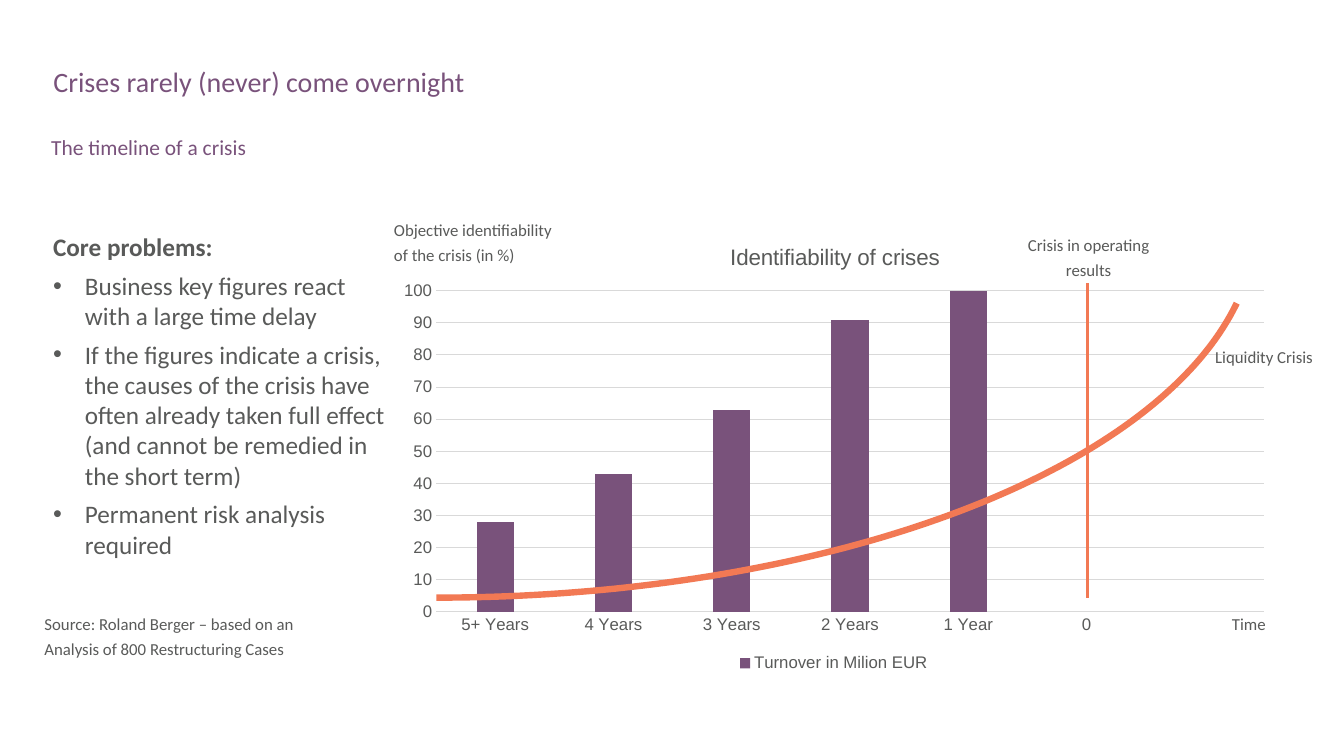
import math
from lxml import etree
from pptx import Presentation
from pptx import util as u
from pptx.chart import data
from pptx.dml import color
from pptx.enum import chart as ch, shapes, text
from pptx.oxml import parse_xml
from pptx.oxml import ns

Cm = u.Cm
THEME = {
    "font": "Calibri", "chart_font": "Arial",
    "purple": color.RGBColor.from_string("79527B"),
    "orange": color.RGBColor.from_string("F27954"),
    "grey": color.RGBColor.from_string("595A59"),
    "grid": color.RGBColor.from_string("D9D9D9"),
    "title": u.Pt(20), "subtitle": u.Pt(15.3), "body": u.Pt(18),
    "chart_title": u.Pt(16), "label": u.Pt(12),
}


def write(sp, box, lines, size, ink, para=None, frame=None):
    sp.left, sp.top, sp.width, sp.height = map(Cm, box)
    tf = sp.text_frame
    settings = {"word_wrap": True, "auto_size": text.MSO_AUTO_SIZE.NONE,
                "vertical_anchor": text.MSO_ANCHOR.TOP}
    for key, value in {**settings, **(frame or {})}.items():
        setattr(tf, key, value)
    for i, line in enumerate(lines):
        p = tf.add_paragraph() if i else tf.paragraphs[0]
        p.text = line
        for key, value in {"alignment": text.PP_ALIGN.LEFT, **(para or {})}.items():
            setattr(p, key, value)
        for r in p.runs:
            r.font.name, r.font.size = THEME["font"], THEME[size]
            r.font.color.rgb = THEME[ink]
    return tf


def place(parent, position, **values):
    layout = parent.find(ns.qn("c:layout"))
    if layout is not None:
        parent.remove(layout)
    items = "".join(f'<c:{k} val="{v}"/>' for k, v in values.items())
    parent.insert(position, parse_xml(
        f'<c:layout {ns.nsdecls("c")}><c:manualLayout>{items}</c:manualLayout></c:layout>'))


prs = Presentation()
prs.slide_width, prs.slide_height = Cm(33.87), Cm(19.05)
s = prs.slides.add_slide(prs.slide_layouts[5])

write(s.shapes.title, (1.09, 1.6, 31.85, 1.63), ["Crises rarely (never) come overnight"],
      "title", "purple", {"line_spacing": 0.9})
write(s.shapes.add_textbox(0, 0, 0, 0), (1.04, 3.43, 31.9, 0.71), ["The timeline of a crisis"],
      "subtitle", "purple", {"line_spacing": 0.7})

problems = [
    "Core problems:",
    "Business key figures react with a large time delay",
    "If the figures indicate a crisis, the causes of the crisis have often already taken "
    "full effect (and cannot be remedied in the short term)",
    "Permanent risk analysis required",
]
tf = write(s.shapes.add_textbox(0, 0, 0, 0), (1.09, 4.55, 8.86, 12.8), problems, "body", "grey",
           frame={"vertical_anchor": text.MSO_ANCHOR.MIDDLE, "margin_bottom": Cm(2.1)})
tf.paragraphs[0].runs[0].font.bold = True
for p in tf.paragraphs[1:]:
    pPr = p._p.get_or_add_pPr()
    pPr.set("marL", str(Cm(0.8)))
    pPr.set("indent", str(-Cm(0.8)))
    clr = etree.SubElement(pPr, ns.qn("a:buClr"))
    etree.SubElement(clr, ns.qn("a:srgbClr"), val=str(THEME["grey"]))
    etree.SubElement(pPr, ns.qn("a:buFont"), typeface="Arial")
    etree.SubElement(pPr, ns.qn("a:buChar"), char="•")
    p.space_before = u.Pt(6)

cd = data.CategoryChartData()
cd.categories = ["5+ Years", "4 Years", "3 Years", "2 Years", "1 Year", "0", ""]
cd.add_series("Turnover in Milion EUR", [28, 43, 63, 91, 100, None, None])
chart = s.shapes.add_chart(ch.XL_CHART_TYPE.COLUMN_CLUSTERED, Cm(9.7), Cm(5.56),
                           Cm(22.63), Cm(11.48), cd).chart
chart.has_title = True
title_p = chart.chart_title.text_frame.paragraphs[0]
title_p.text = "Identifiability of crises"
chart.has_legend = True
chart.legend.position = ch.XL_LEGEND_POSITION.BOTTOM
chart.legend.include_in_layout = False
chart_fonts = [(chart.font, "label"), (title_p.runs[0].font, "chart_title"),
               (chart.legend.font, "label"), (chart.category_axis.tick_labels.font, "label"),
               (chart.value_axis.tick_labels.font, "label")]
for font, size in chart_fonts:
    font.name, font.size, font.bold = THEME["chart_font"], THEME[size], False
    font.color.rgb = THEME["grey"]

for axis in (chart.category_axis, chart.value_axis):
    axis.major_tick_mark = axis.minor_tick_mark = ch.XL_TICK_MARK.NONE
val = chart.value_axis
for key, value in {"minimum_scale": 0, "maximum_scale": 100, "major_unit": 10}.items():
    setattr(val, key, value)
val.format.line.fill.background()
for line in (chart.category_axis.format.line, val.major_gridlines.format.line):
    line.color.rgb, line.width = THEME["grid"], u.Pt(0.75)

plot = chart.plots[0]
for key, value in {"gap_width": 219, "overlap": -27, "vary_by_categories": False}.items():
    setattr(plot, key, value)
fill = plot.series[0].format.fill
fill.solid()
fill.fore_color.rgb = THEME["purple"]
place(chart.chart_title._element, 1, xMode="edge", yMode="edge", x=0.38, y=0.04)
place(chart._chartSpace.chart.plotArea, 0, layoutTarget="inner", xMode="edge", yMode="edge",
      x=0.057, y=0.154, w=0.922, h=0.705)

start_x, start_y, radius_x, radius_y, sweep, steps = 11, 15.06, 20.65, 9.45, 77.6, 80
angles = [math.radians(sweep * i / steps) for i in range(steps + 1)]
points = [(Cm(start_x + radius_x * math.sin(a)), Cm(start_y - radius_y * (1 - math.cos(a))))
          for a in angles]
builder = s.shapes.build_freeform(*points[0])
builder.add_line_segments(points[1:], close=False)
curve = builder.convert_to_shape()
curve.shadow.inherit = False
curve.fill.background()

marker = s.shapes.add_connector(shapes.MSO_CONNECTOR.STRAIGHT, Cm(27.41), Cm(15.06),
                                Cm(27.41), Cm(7.14))
etree.SubElement(marker._element.spPr, ns.qn("a:effectLst"))
for sp, width in ((curve, 4.56), (marker, 2)):
    sp.line.color.rgb, sp.line.width = THEME["orange"], u.Pt(width)
etree_order = marker._element.spPr
etree_order.append(etree_order.find(ns.qn("a:effectLst")))

left, center, right = text.PP_ALIGN.LEFT, text.PP_ALIGN.CENTER, text.PP_ALIGN.RIGHT
labels = [
    ((0.89, 15.24, 7.34, 1.27), left,
     "Source: Roland Berger – based on an Analysis of 800 Restructuring Cases"),
    ((23.93, 5.69, 7.01, 1.27), center, "Crisis in operating\nresults"),
    ((26.31, 8.51, 7.01, 0.74), right, "Liquidity Crisis"),
    ((9.7, 5.31, 7.01, 1.9), left, "Objective identifiability\nof the crisis (in %)"),
    ((30.73, 15.24, 1.4, 1.37), right, "Time"),
]
insets = {"margin_left": Cm(0.23), "margin_right": Cm(0.23),
          "margin_top": Cm(0.1), "margin_bottom": Cm(0.1)}
for box, align, label in labels:
    write(s.shapes.add_textbox(0, 0, 0, 0), box, [label], "label", "grey",
          {"alignment": align, "line_spacing": 1.25}, insets)

prs.save("out.pptx")
